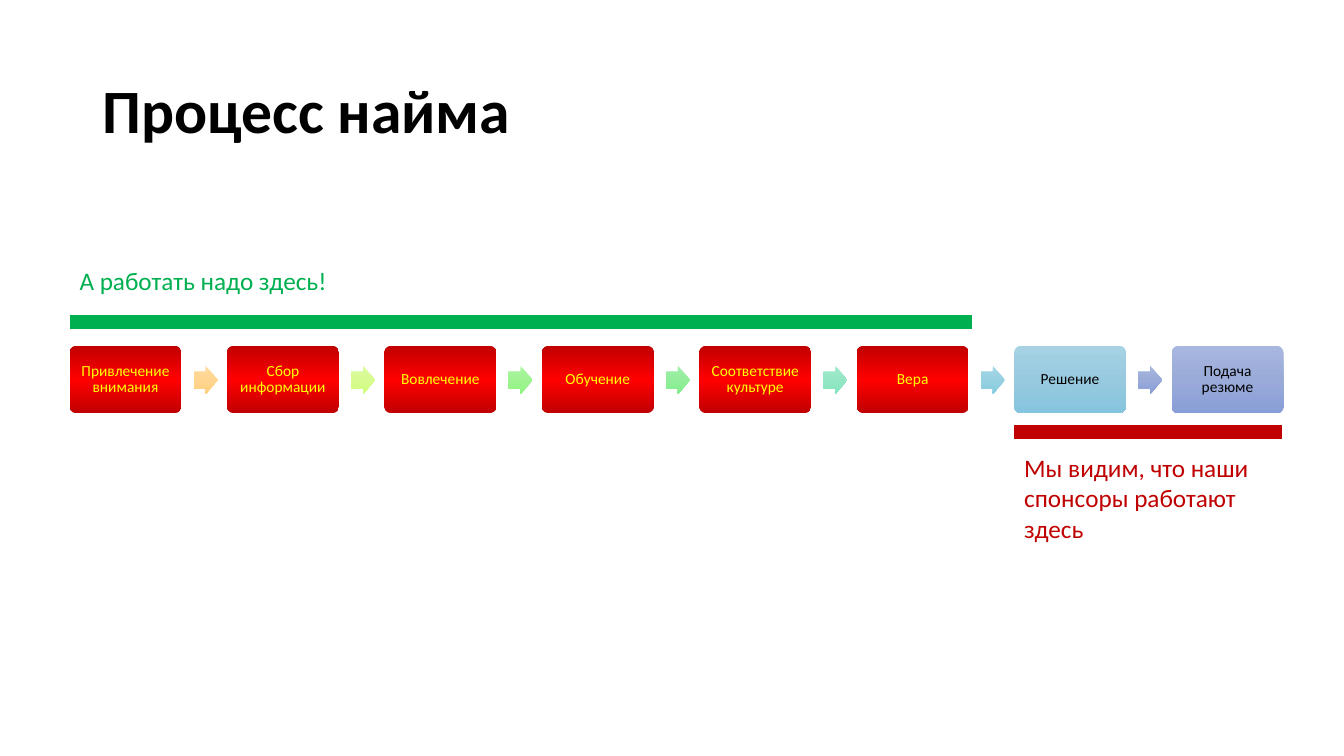
from lxml import etree
from pptx import Presentation
from pptx import util as u
from pptx.dml.color import RGBColor
from pptx.enum import shapes, text
from pptx.oxml.ns import qn

COLORS = {
    "black": "000000",
    "yellow": "FFFF00",
    "red": "C00000",
    "green": "00B050",
}

# Gradient stops at 0, 50 and 100 percent
GRADIENTS = {
    "red": ("C00000", "FF0000", "C00000"),
    "orange": ("FFDB9E", "FFD590", "FFD07C"),
    "lime": ("DCFC9F", "D6FA91", "D3FF7C"),
    "light green": ("ACF6A0", "9FF392", "8EF77D"),
    "mint": ("A1F0A9", "93ED9B", "7FEF89"),
    "teal": ("A3EACC", "95E6C4", "81E7BD"),
    "sky": ("A5D7E5", "97D0E0", "84CDDF"),
    "blue": ("A6D2E4", "98CADF", "85C4DE"),
    "violet": ("A8B7DF", "9AABD9", "889ED7"),
}

# Label, box gradient, text colour, gradient of the arrow that follows
STEPS = [
    ("Привлечение внимания", "red", "yellow", "orange"),
    ("Сбор информации", "red", "yellow", "lime"),
    ("Вовлечение", "red", "yellow", "light green"),
    ("Обучение", "red", "yellow", "mint"),
    ("Соответствие культуре", "red", "yellow", "teal"),
    ("Вера", "red", "yellow", "sky"),
    ("Решение", "blue", "black", "violet"),
    ("Подача резюме", "violet", "black", None),
]

FIRST_LEFT, LAST_LEFT = 0.69, 11.62
PITCH = (LAST_LEFT - FIRST_LEFT) / (len(STEPS) - 1)


class SlideBuilder:
    font = "Calibri"

    def __init__(self, page):
        self.page = page

    def set_text(self, frame, words, size, color, bold=False, spacing=None, align=None):
        frame.text = words
        paragraph = frame.paragraphs[0]
        paragraph.line_spacing = spacing
        paragraph.alignment = align
        font = paragraph.runs[0].font
        font.name, font.size, font.bold = self.font, u.Pt(size), bold
        font.color.rgb = RGBColor.from_string(COLORS[color])

    def label(self, words, place, size, color, wrap=True, middle=False, **style):
        box = self.page.shapes.add_textbox(*map(u.Inches, place))
        frame = box.text_frame
        frame.word_wrap = wrap
        if middle:
            frame.vertical_anchor = text.MSO_ANCHOR.MIDDLE
        self.set_text(frame, words, size, color, **style)

    def block(self, kind, place, gradient, adjustments):
        shape = self.page.shapes.add_shape(kind, *map(u.Inches, place))
        shape.shadow.inherit = False
        shape.line.fill.background()
        for index, value in enumerate(adjustments):
            shape.adjustments[index] = value
        shape.fill.gradient()
        shape.fill.gradient_angle = 270
        stops = shape.element.spPr.find(".//" + qn("a:gsLst"))
        for old in list(stops):
            stops.remove(old)
        for index, color in enumerate(GRADIENTS[gradient]):
            stop = etree.SubElement(stops, qn("a:gs"), pos=str(index * 50000))
            etree.SubElement(stop, qn("a:srgbClr"), val=color)
        return shape

    def step(self, words, left, gradient, color):
        box = self.block(shapes.MSO_SHAPE.ROUNDED_RECTANGLE,
                         (left, 3.43, 1.11, 0.67), gradient, [0.1])
        frame = box.text_frame
        frame.word_wrap = True
        frame.vertical_anchor = text.MSO_ANCHOR.MIDDLE
        frame.margin_left = frame.margin_right = u.Inches(0.05)
        frame.margin_top = frame.margin_bottom = u.Inches(0.05)
        self.set_text(frame, words, 11, color, spacing=0.9, align=text.PP_ALIGN.CENTER)

    def arrow(self, left, gradient):
        self.block(shapes.MSO_SHAPE.RIGHT_ARROW,
                   (left, 3.63, 0.24, 0.28), gradient, [0.6, 0.5])

    def bar(self, start, end, top, color):
        line = self.page.shapes.add_connector(
            shapes.MSO_CONNECTOR.STRAIGHT, *map(u.Inches, (start, top, end, top)))
        line.line.width = u.Pt(10)
        line.line.color.rgb = RGBColor.from_string(COLORS[color])
        etree.SubElement(line.element.spPr, qn("a:effectLst"))


def main():
    deck = Presentation()
    deck.slide_width, deck.slide_height = u.Inches(13.33), u.Inches(7.5)
    builder = SlideBuilder(deck.slides.add_slide(deck.slide_layouts[6]))

    # Title
    builder.label("Процесс найма", (0.92, 0.4, 11.5, 1.45), 44, "black",
                  middle=True, bold=True, spacing=0.9)

    # Hiring steps
    for index, (words, gradient, color, arrow) in enumerate(STEPS):
        left = FIRST_LEFT + index * PITCH
        builder.step(words, left, gradient, color)
        if arrow:
            builder.arrow(left + 1.23, arrow)

    # Where sponsors work now
    builder.bar(10.06, 12.72, 4.29, "red")
    builder.label("Мы видим, что наши спонсоры работают здесь",
                  (10.06, 4.44, 2.74, 1.01), 18, "red")

    # Where the work is needed
    builder.bar(FIRST_LEFT, 9.64, 3.19, "green")
    builder.label("А работать надо здесь!", (FIRST_LEFT, 2.58, 2.68, 0.4), 18,
                  "green", wrap=False)

    deck.save("out.pptx")


if __name__ == "__main__":
    main()
